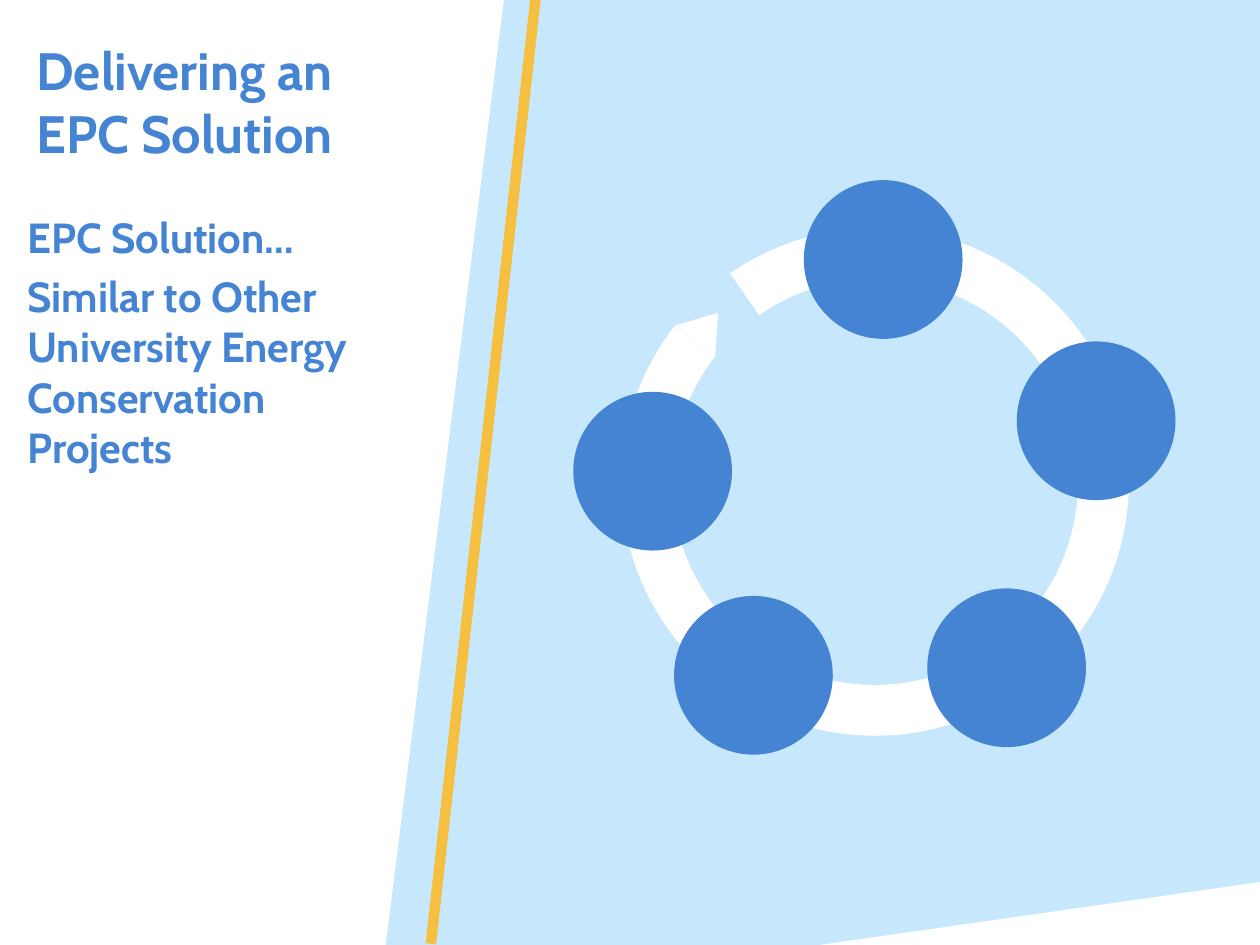
from dataclasses import dataclass

from lxml.etree import SubElement
from pptx import Presentation
from pptx.dml.color import RGBColor
from pptx.enum.shapes import MSO_CONNECTOR, MSO_SHAPE
from pptx.enum.text import MSO_ANCHOR, MSO_AUTO_SIZE, PP_ALIGN
from pptx.oxml.ns import qn
from pptx.shapes.autoshape import Shape
from pptx.slide import Slide
from pptx.text.text import TextFrame
from pptx.util import Inches, Pt


@dataclass(frozen=True)
class Theme:
    """Colours, font and type sizes."""
    blue: RGBColor = RGBColor(0x45, 0x84, 0xD3)
    sky: RGBColor = RGBColor(0xC6, 0xE7, 0xFC)
    gold: RGBColor = RGBColor(0xF5, 0xC0, 0x40)
    white: RGBColor = RGBColor(0xFF, 0xFF, 0xFF)
    font: str = "Cabin"
    head: int = 30
    body: int = 24


@dataclass(frozen=True)
class Box:
    """Place and size in inches."""
    left: float
    top: float
    width: float
    height: float


@dataclass(frozen=True)
class Step:
    """Top left corner of one circle on the ring."""
    left: float
    top: float


THEME = Theme()
SIZE = 1.26
STEPS = [
    Step(6.38, 1.43),
    Step(8.07, 2.71),
    Step(7.36, 4.67),
    Step(5.35, 4.73),
    Step(4.55, 3.11),
]
EDGE = [(4.28, 0), (10, 0), (10, 7.49), (3.41, 7.5)]


def paint(shape: Shape, color: RGBColor) -> None:
    """Give a shape a flat fill with no outline or shadow."""
    shape.fill.solid()
    shape.fill.fore_color.rgb = color
    shape.line.fill.background()
    shape.shadow.inherit = False


def add_form(slide: Slide, kind: MSO_SHAPE, box: Box, color: RGBColor) -> Shape:
    """Add a flat preset shape."""
    shape = slide.shapes.add_shape(
        kind, Inches(box.left), Inches(box.top), Inches(box.width), Inches(box.height)
    )
    paint(shape, color)
    return shape


def add_panel(slide: Slide) -> None:
    """Draw the slanted panel and its gold edge."""
    form = slide.shapes.build_freeform(*EDGE[0], scale=Inches(1))
    form.add_line_segments(EDGE[1:], close=True)
    paint(form.convert_to_shape(), THEME.sky)
    line = slide.shapes.add_connector(
        MSO_CONNECTOR.STRAIGHT, Inches(3.42), Inches(7.49), Inches(4.25), Inches(-0.01)
    )
    line.line.color.rgb = THEME.gold
    line.line.width = Pt(6)
    SubElement(line._element.spPr, qn("a:effectLst"))


def add_ring(slide: Slide) -> None:
    """Draw the open ring, its circles and its arrow tip."""
    ring = add_form(slide, MSO_SHAPE.BLOCK_ARC, Box(4.93, 1.81, 4.03, 4.03), THEME.white)
    for spot, value in enumerate((141.12, 130.81, 0.1)):
        ring.adjustments[spot] = value
    for step in STEPS:
        add_form(slide, MSO_SHAPE.OVAL, Box(step.left, step.top, SIZE, SIZE), THEME.blue)
    tip = add_form(
        slide, MSO_SHAPE.ISOSCELES_TRIANGLE, Box(5.41, 2.45, 0.4, 0.29), THEME.white
    )
    tip.rotation = 38.7


def set_text(frame: TextFrame, lines: list[str], size: int) -> None:
    """Fill a frame with bold blue left-aligned paragraphs."""
    frame.word_wrap = True
    frame.auto_size = MSO_AUTO_SIZE.NONE
    frame.vertical_anchor = MSO_ANCHOR.TOP
    frame.text = "\n".join(lines)
    for rank, para in enumerate(frame.paragraphs):
        para.alignment = PP_ALIGN.LEFT
        para.line_spacing = 1.0
        para.space_before = Pt(0.2 * size if rank else 0)
        para.font.name = THEME.font
        para.font.size = Pt(size)
        para.font.bold = True
        para.font.color.rgb = THEME.blue


def add_words(slide: Slide) -> None:
    """Place the title and the text below it."""
    title = slide.shapes.title
    title.left, title.top = Inches(0.19), Inches(0.25)
    title.width, title.height = Inches(2.75), Inches(0.94)
    set_text(title.text_frame, ["Delivering an EPC Solution"], THEME.head)
    text = slide.shapes.add_textbox(Inches(0.12), Inches(1.63), Inches(2.86), Inches(2.81))
    lines = ["EPC Solution…", "Similar to Other University Energy Conservation Projects"]
    set_text(text.text_frame, lines, THEME.body)


def main() -> None:
    """Build and save the slide."""
    deck = Presentation()
    deck.slide_width, deck.slide_height = Inches(10), Inches(7.5)
    slide = deck.slides.add_slide(deck.slide_layouts[5])
    slide.background.fill.solid()
    slide.background.fill.fore_color.rgb = THEME.white
    add_panel(slide)
    add_ring(slide)
    add_words(slide)
    deck.save("out.pptx")


if __name__ == "__main__":
    main()
